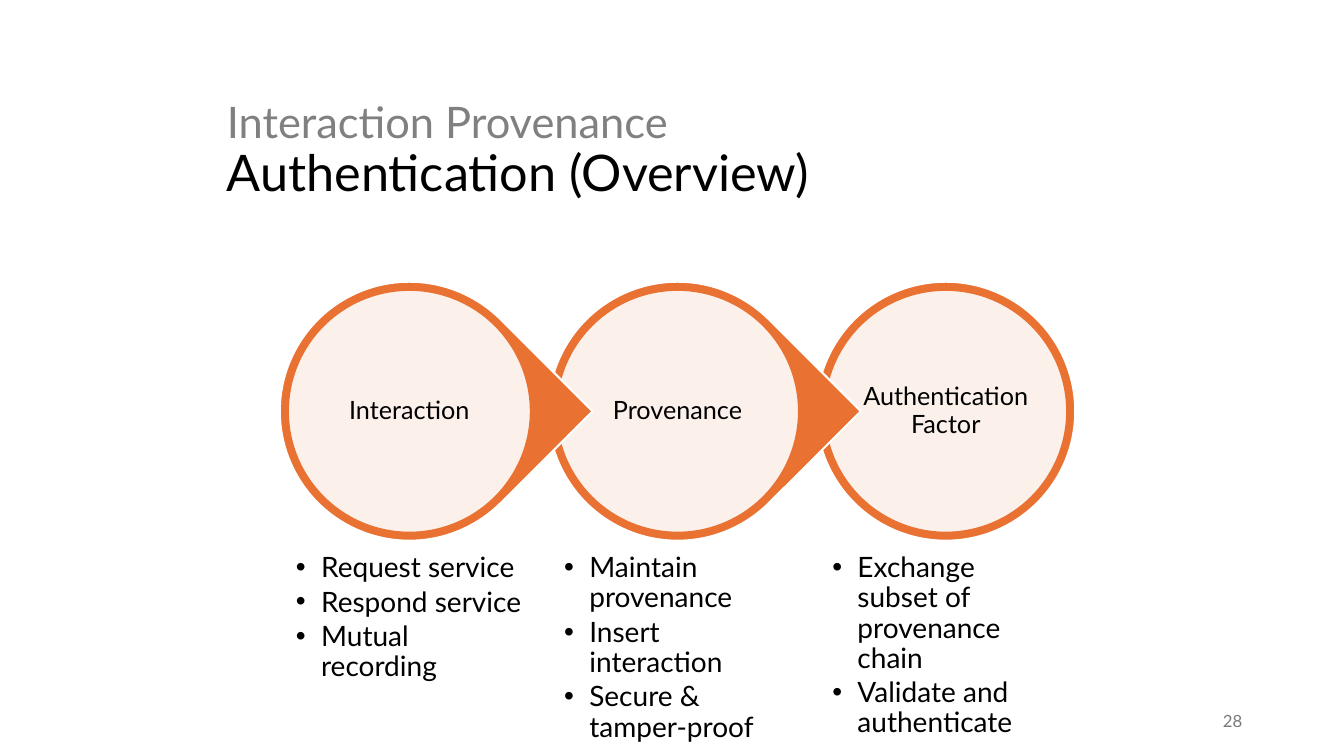
from lxml import etree
from pptx import Presentation
from pptx.dml.color import RGBColor
from pptx.enum.shapes import MSO_SHAPE
from pptx.enum.text import MSO_ANCHOR, MSO_AUTO_SIZE, PP_ALIGN
from pptx.oxml.ns import qn
from pptx.util import Inches, Pt

ELLIPSE, TEARDROP = MSO_SHAPE.OVAL, MSO_SHAPE.TEAR
MIDDLE, TOP = MSO_ANCHOR.MIDDLE, MSO_ANCHOR.TOP
LEFT, CENTER, RIGHT = PP_ALIGN.LEFT, PP_ALIGN.CENTER, PP_ALIGN.RIGHT
FONT, BLACK, WHITE, ORANGE = "Lato", "000000", "FFFFFF", "E97132"

FIRST_CENTER, PITCH, CENTER_Y = 4.06, 2.66, 4.08
RING, DISC, LABEL = 2.57, 2.41, 1.72
LIST_TOP, LIST_HEIGHT = 5.41, 1.41
STAGES = [
    ("Interaction", ["Request service", "Respond service", "Mutual recording"]),
    ("Provenance", ["Maintain provenance", "Insert interaction", "Secure & tamper-proof"]),
    ("Authentication Factor", ["Exchange subset of provenance chain", "Validate and authenticate"]),
]


def add_span(para, text, size, color):
    span = para.add_run()
    span.text = text
    span.font.name = FONT
    span.font.size = Pt(size)
    span.font.color.rgb = RGBColor.from_string(color)


def add_box(left, top, width, height, inset, anchor):
    box = page.shapes.add_textbox(Inches(left), Inches(top), Inches(width), Inches(height))
    frame = box.text_frame
    frame.word_wrap = True
    frame.vertical_anchor = anchor
    frame.margin_left = frame.margin_right = Inches(inset)
    frame.margin_top = frame.margin_bottom = Inches(inset)
    return frame


deck = Presentation()
deck.slide_width, deck.slide_height = Inches(13.33), Inches(7.5)
page = deck.slides.add_slide(deck.slide_layouts[5])

number = add_box(9.42, 6.95, 3, 0.4, 0.1, MIDDLE).paragraphs[0]
number.alignment = RIGHT
add_span(number, "28", 12, "797979")

title = page.shapes.title
title.left, title.top, title.width, title.height = (Inches(n) for n in (2.15, 0.92, 9, 1.17))
title.text_frame.auto_size = MSO_AUTO_SIZE.NONE
title.text_frame.vertical_anchor = MIDDLE
heading = title.text_frame.paragraphs[0]
heading.alignment = LEFT
heading.line_spacing = 0.9
add_span(heading, "Interaction Provenance", 31, "808080")
heading.add_line_break()
add_span(heading, "Authentication (Overview)", 36, BLACK)

for index, (stage, points) in reversed(list(enumerate(STAGES))):
    center = FIRST_CENTER + index * PITCH
    last = index == len(STAGES) - 1
    for kind, size, fill, line in (
        (ELLIPSE if last else TEARDROP, RING, ORANGE, WHITE),
        (ELLIPSE, DISC, WHITE, ORANGE),
    ):
        shape = page.shapes.add_shape(
            kind, Inches(center - size / 2), Inches(CENTER_Y - size / 2), Inches(size), Inches(size))
        shape.shadow.inherit = False
        shape.fill.solid()
        shape.fill.fore_color.rgb = RGBColor.from_string(fill)
        shape.line.color.rgb = RGBColor.from_string(line)
        shape.line.width = Pt(1.5)
        if kind == TEARDROP:
            shape.rotation = 45
        if size == DISC:
            tint = shape.fill._xPr.find(qn("a:solidFill"))[0]
            etree.SubElement(tint, qn("a:alpha")).set("val", "90000")

    label = add_box(center - LABEL / 2, CENTER_Y - LABEL / 2, LABEL, LABEL, 0.03, MIDDLE).paragraphs[0]
    label.alignment = CENTER
    label.line_spacing = 0.9
    add_span(label, stage, 18, BLACK)

    frame = add_box(center - DISC / 2, LIST_TOP, DISC, LIST_HEIGHT, 0.08, TOP)
    for row, point in enumerate(points):
        para = frame.add_paragraph() if row else frame.paragraphs[0]
        para.level = 1
        para.line_spacing = 0.9
        para.space_after = Pt(3)
        properties = para._p.get_or_add_pPr()
        properties.set("marL", str(Inches(0.25)))
        properties.set("indent", str(-Inches(0.25)))
        etree.SubElement(properties, qn("a:buFont")).set("typeface", "Arial")
        etree.SubElement(properties, qn("a:buChar")).set("char", "•")
        add_span(para, point, 20, BLACK)

deck.save("out.pptx")
